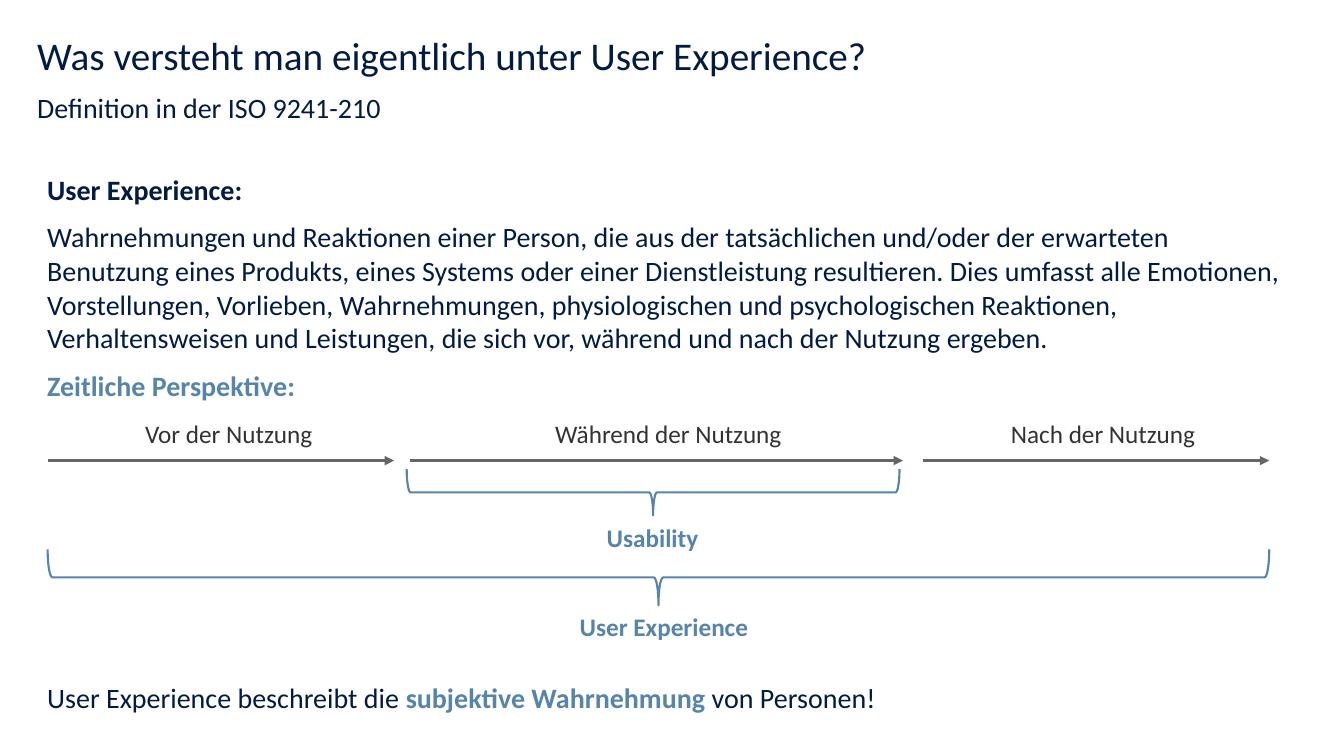
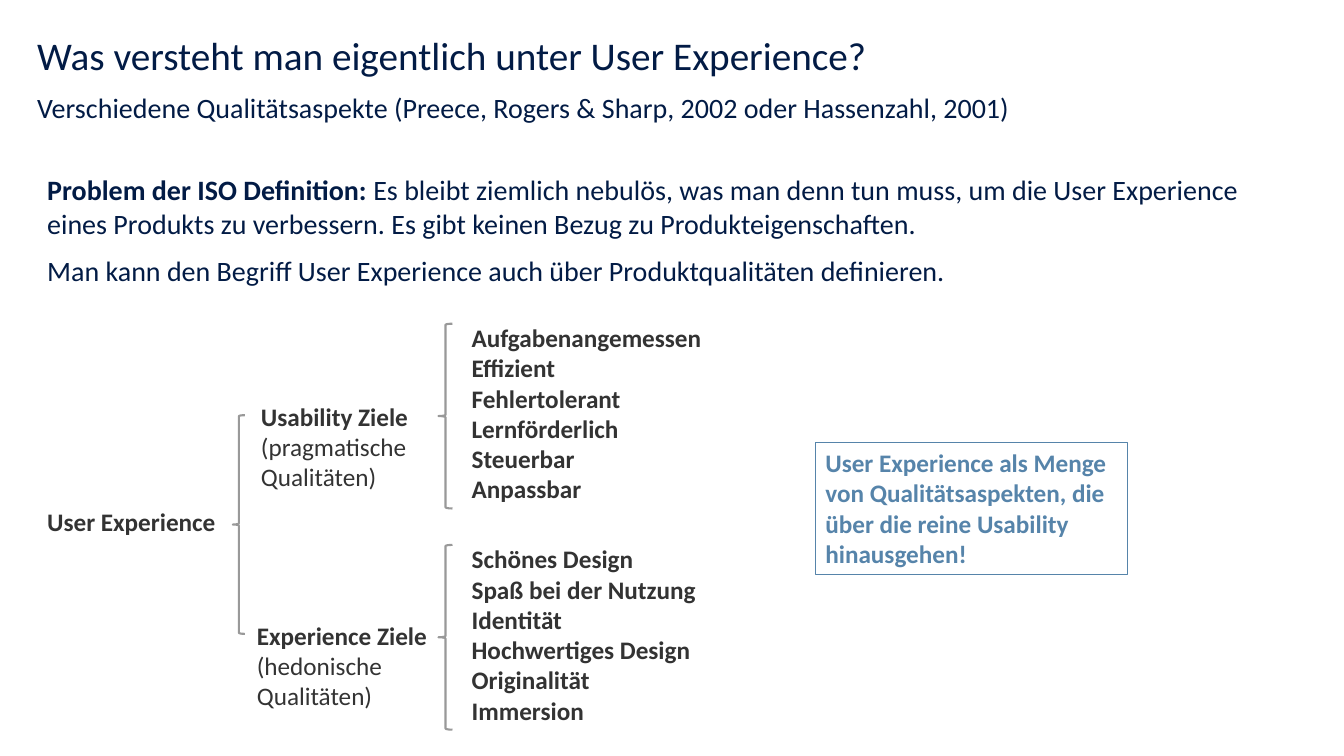
from lxml import etree
from pptx import Presentation
from pptx.dml.color import RGBColor
from pptx.enum.shapes import MSO_CONNECTOR, MSO_SHAPE
from pptx.enum.text import MSO_ANCHOR, MSO_AUTO_SIZE, PP_ALIGN
from pptx.oxml.ns import qn
from pptx.util import Pt

STRAIGHT = MSO_CONNECTOR.STRAIGHT
RECT, LEFT_BRACE, RIGHT_BRACE = MSO_SHAPE.RECTANGLE, MSO_SHAPE.LEFT_BRACE, MSO_SHAPE.RIGHT_BRACE
TOP, MIDDLE = MSO_ANCHOR.TOP, MSO_ANCHOR.MIDDLE
GROW, FIXED = MSO_AUTO_SIZE.SHAPE_TO_FIT_TEXT, MSO_AUTO_SIZE.NONE
LEFT = PP_ALIGN.LEFT

# Shared look
FONT = "Calibri"
NAVY, BLUE, TEXT, ARROW, BRACE = "021B45", "5684AA", "333333", "666666", "999999"
MARGIN, CONTENT_W, BODY_Y = 26.6, 907, 119.6
TITLE_BOX = (MARGIN, 23.5, CONTENT_W, 36)
SUBTITLE_BOX = (MARGIN, 64.8, CONTENT_W, 24)
NO_INSETS = dict(margin_left=0, margin_right=0, margin_top=0, margin_bottom=0)
PARA = dict(alignment=LEFT, space_before=Pt(10))
LABEL = dict(alignment=LEFT, space_before=Pt(0))
TITLE = "Was versteht man eigentlich unter User Experience?"


def rgb(value):
    return RGBColor.from_string(value)


def set_all(target, values):
    for name, value in values.items():
        setattr(target, name, value)


def place(sp, box):
    set_all(sp, dict(zip(("left", "top", "width", "height"), map(Pt, box))))


def write(tf, paragraphs, size, para_format, **frame_format):
    """Each paragraph is a list of runs: (text, colour, bold)."""
    set_all(tf, dict(word_wrap=True, vertical_anchor=TOP) | frame_format)
    for i, runs in enumerate(paragraphs):
        p = tf.paragraphs[0] if i == 0 else tf.add_paragraph()
        set_all(p, para_format)
        for text, colour, bold in runs:
            r = p.add_run()
            r.text = text
            set_all(r.font, dict(name=FONT, size=Pt(size), bold=bold))
            r.font.color.rgb = rgb(colour)


def body_text(s, box, paragraphs):
    tf = s.shapes.add_textbox(*map(Pt, box)).text_frame
    write(tf, paragraphs, 20, PARA, auto_size=FIXED)


def label(s, box, paragraphs, wrap=False):
    tf = s.shapes.add_textbox(*map(Pt, box)).text_frame
    write(tf, paragraphs, 18, LABEL, auto_size=GROW, word_wrap=wrap)


def outline(s, kind, box, colour, width):
    sp = s.shapes.add_shape(kind, *map(Pt, box))
    sp.shadow.inherit = False
    sp.fill.background()
    sp.line.color.rgb = rgb(colour)
    sp.line.width = Pt(width)
    return sp


def brace_below(s, x, y, w, h):
    """Right brace turned to point down, filling the given box."""
    sp = outline(s, RIGHT_BRACE, (x + (w - h) / 2, y + (h - w) / 2, h, w), BLUE, 1.5)
    sp.rotation = 90


def arrow(s, x1, x2, y):
    cxn = s.shapes.add_connector(STRAIGHT, Pt(x1), Pt(y), Pt(x2), Pt(y))
    cxn.line.color.rgb = rgb(ARROW)
    cxn.line.width = Pt(2.25)
    ln = cxn.line._get_or_add_ln()
    etree.SubElement(ln, qn("a:tailEnd"), type="triangle")
    etree.SubElement(cxn._element.spPr, qn("a:effectLst"))


def new_slide(prs, subtitle):
    s = prs.slides.add_slide(prs.slide_layouts[1])
    title, body = s.placeholders
    place(title, TITLE_BOX)
    write(title.text_frame, [[(TITLE, NAVY, False)]], 28, dict(alignment=LEFT, line_spacing=0.9),
          vertical_anchor=MIDDLE, auto_size=FIXED, **NO_INSETS)
    place(body, SUBTITLE_BOX)
    write(body.text_frame, [[(subtitle, NAVY, False)]], 20, PARA, auto_size=FIXED, **NO_INSETS)
    pPr = body.text_frame.paragraphs[0]._p.get_or_add_pPr()
    pPr.set("marL", "0")
    pPr.set("indent", "0")
    etree.SubElement(pPr, qn("a:buNone"))
    return s


def timeline(s, x, y, w):
    """Phases of use, with the spans of usability and user experience."""
    phases = [  # start, end, label start, label width, text
        (0, 247.5, 62.5, 135, "Vor der Nutzung"),
        (259, 611, 355.5, 182, "Während der Nutzung"),
        (625.5, w, 681, 148, "Nach der Nutzung"),
    ]
    for start, end, label_x, label_w, text in phases:
        arrow(s, x + start, x + end, y + 33.5)
        label(s, (x + label_x, y, label_w, 29), [[(text, TEXT, False)]])
    spans = [  # brace box, label box, text
        ((256.5, 39.7, 352, 33), (392.3, 74, 81, 29), "Usability"),
        ((0, 96.9, w, 40), (373, 137.5, 135, 29), "User Experience"),
    ]
    for (bx, by, bw, bh), (lx, ly, lw, lh), text in spans:
        brace_below(s, x + bx, y + by, bw, bh)
        label(s, (x + lx, y + ly, lw, lh), [[(text, BLUE, True)]])


def quality_tree(s, x, y):
    """User experience, its two goals and their qualities."""
    branches = [  # goal box, goal, kind, qualities
        ((152.7, 56, 121, 73), "Usability Ziele", "(pragmatische Qualitäten)",
         ["Aufgabenangemessen", "Effizient", "Fehlertolerant", "Lernförderlich",
          "Steuerbar", "Anpassbar"]),
        ((149.8, 212.4, 137, 73), "Experience Ziele", "(hedonische Qualitäten)",
         ["Schönes Design", "Spaß bei der Nutzung", "Identität", "Hochwertiges Design",
          "Originalität", "Immersion"]),
    ]
    label(s, (x, y + 131, 135, 29), [[("User Experience", TEXT, True)]])
    outline(s, LEFT_BRACE, (x + 139.7, y + 69.8, 8.6, 156.2), BRACE, 1.5)
    for i, ((gx, gy, gw, gh), goal, kind, qualities) in enumerate(branches):
        top = y + i * 158
        label(s, (x + gx, y + gy, gw, gh), [[(goal, TEXT, True)], [(kind, TEXT, False)]], wrap=True)
        outline(s, LEFT_BRACE, (x + 286.6, top + 4.4, 10, 132), BRACE, 1.5)
        label(s, (x + 303.2, top, 200, 138), [[(q, TEXT, True)] for q in qualities], wrap=True)


def callout(s, box, text):
    sp = outline(s, RECT, box, BLUE, 0.75)
    write(sp.text_frame, [[(text, BLUE, True)]], 18, LABEL, auto_size=GROW)


def definition_slide(prs):
    s = new_slide(prs, "Definition in der ISO 9241-210")
    body_text(s, (MARGIN, BODY_Y, CONTENT_W, 210), [
        [("User Experience:", NAVY, True)],
        [("Wahrnehmungen und Reaktionen einer Person, die aus der tatsächlichen und/oder der "
          "erwarteten Benutzung eines Produkts, eines Systems oder einer Dienstleistung "
          "resultieren. Dies umfasst alle Emotionen, Vorstellungen, Vorlieben, Wahrnehmungen, "
          "physiologischen und psychologischen Reaktionen, Verhaltensweisen und Leistungen, "
          "die sich vor, während und nach der Nutzung ergeben.", NAVY, False)],
        [("Zeitliche Perspektive:", BLUE, True)],
    ])
    timeline(s, 34, 295.5, 872.6)
    body_text(s, (MARGIN, 482.4, CONTENT_W, 36), [
        [("User Experience beschreibt die ", NAVY, False),
         ("subjektive Wahrnehmung ", BLUE, True),
         ("von Personen!", NAVY, False)],
    ])


def quality_slide(prs):
    s = new_slide(prs, "Verschiedene Qualitätsaspekte (Preece, Rogers & Sharp, 2002 "
                       "oder Hassenzahl, 2001)")
    body_text(s, (MARGIN, BODY_Y, CONTENT_W, 93), [
        [("Problem der ISO Definition: ", NAVY, True),
         ("Es bleibt ziemlich nebulös, was man denn tun muss, um die User Experience eines "
          "Produkts zu verbessern. Es gibt keinen Bezug zu Produkteigenschaften.", NAVY, False)],
        [("Man kann den Begriff User Experience auch über Produktqualitäten definieren.",
          NAVY, False)],
    ])
    quality_tree(s, MARGIN, 226.8)
    callout(s, (582.5, 316, 223.2, 94.3),
            "User Experience als Menge von Qualitätsaspekten, die über die reine Usability "
            "hinausgehen!")


def main():
    prs = Presentation()
    prs.slide_width, prs.slide_height = Pt(960), Pt(540)
    definition_slide(prs)
    quality_slide(prs)
    prs.save("out.pptx")


if __name__ == "__main__":
    main()
